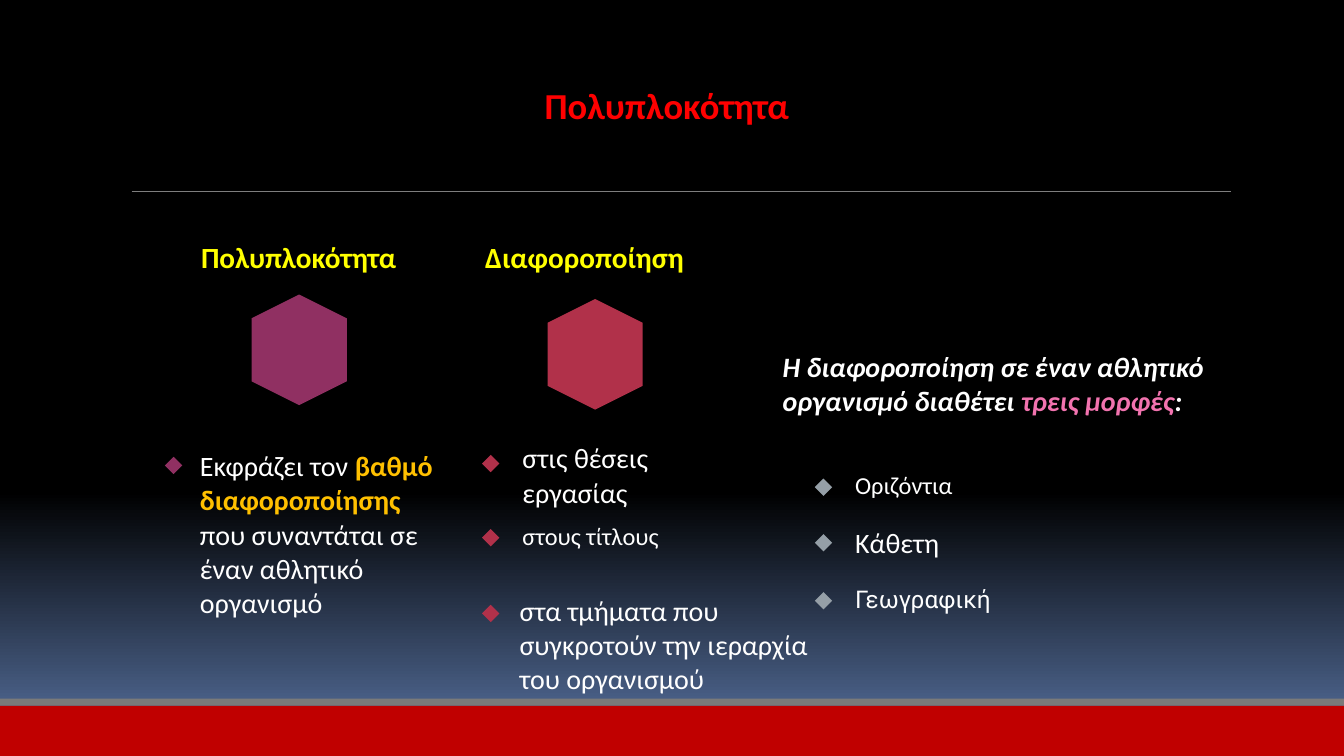
from copy import deepcopy

from pptx import Presentation
from pptx.dml.color import RGBColor
from pptx.enum.shapes import MSO_CONNECTOR, MSO_SHAPE
from pptx.enum.text import MSO_ANCHOR
from pptx.oxml.ns import qn
from pptx.util import Pt
from lxml import etree

RECTANGLE = MSO_SHAPE.RECTANGLE
DIAMOND = MSO_SHAPE.DIAMOND
STRAIGHT = MSO_CONNECTOR.STRAIGHT
TOP = MSO_ANCHOR.TOP

PLUM, CRIMSON, GREY = "903062", "B1314A", "959FA7"
WIDTH, HEIGHT = 960, 540


def color(hex_string):
    return RGBColor.from_string(hex_string)


def paint(shape, hex_string):
    shape.shadow.inherit = False
    shape.fill.solid()
    shape.fill.fore_color.rgb = color(hex_string)
    shape.line.fill.background()


presentation = Presentation()
presentation.slide_width, presentation.slide_height = Pt(WIDTH), Pt(HEIGHT)
slide = presentation.slides.add_slide(presentation.slide_layouts[6])
shapes = slide.shapes

# Background: black fading to blue at the bottom
background = slide.background.fill
background.gradient()
background.gradient_angle = 270
stop_list = slide.element.find(".//" + qn("a:gsLst"))
stop_list.append(deepcopy(stop_list[-1]))
stops = [(0, "000000"), (0.65, "000000"), (1, "5B77A8")]
for stop, (position, hex_string) in zip(background.gradient_stops, stops):
    stop.position = position
    stop.color.rgb = color(hex_string)

# Footer bands
for top, height, hex_string in [(504, 36, "C00000"), (499, 5, "7A7A7A")]:
    paint(shapes.add_shape(RECTANGLE, 0, Pt(top), Pt(WIDTH), Pt(height)), hex_string)

# Rule under the title
rule = shapes.add_connector(STRAIGHT, Pt(94), Pt(136.6), Pt(879), Pt(136.6))
rule.line.color.rgb = color("7E7E7E")
rule.line.width = Pt(0.5)
etree.SubElement(rule.element.spPr, qn("a:effectLst"))

# Upright hexagons, given by their top vertex
for x, y, hex_string in [(425.1, 213.6, CRIMSON), (213.7, 210.4, PLUM)]:
    builder = shapes.build_freeform(Pt(x), Pt(y))
    corners = [(-34, 17), (-34, 62), (0, 79), (34, 62), (34, 17)]
    builder.add_line_segments([(Pt(x + dx), Pt(y + dy)) for dx, dy in corners])
    paint(builder.convert_to_shape(), hex_string)

# Diamond bullets by column
bullet_columns = [
    (117.8, [326.3], PLUM),
    (344.3, [324.9, 377.9, 432], CRIMSON),
    (582, [341.8, 381.5, 422.9], GREY),
]
for left, tops, hex_string in bullet_columns:
    for top in tops:
        bullet = shapes.add_shape(DIAMOND, Pt(left), Pt(top), Pt(12.4), Pt(12.4))
        paint(bullet, hex_string)

# Run formats; raised text is drawn smaller than its nominal size
body = {"name": "Calibri", "size": Pt(20), "color": "FFFFFF"}
raised = {**body, "size": Pt(30), "baseline": 3000}
title = {**raised, "size": Pt(45), "color": "FF0000", "bold": True}
heading = {**raised, "size": Pt(36), "color": "FFFF00", "bold": True}
roboto = {**raised, "name": "Roboto", "baseline": 1000}
amber = {**body, "color": "FFC000", "bold": True}
lead = {**body, "bold": True, "italic": True}
pink = {**lead, "color": "F273AF"}

# Text boxes: left, top, width, height, then paragraphs of
# (line spacing, space before, runs)
LINE = Pt(24.4)
text_boxes = [
    (388.1, 64.1, 206.6, 31.7, [(Pt(31.6), 1.6, [("Πολυπλοκότητα", title)])]),
    (142.6, 175, 165.6, 25.9, [(Pt(25.4), 1.3, [("Πολυπλοκότητα", heading)])]),
    (345.6, 175, 169.2, 25.9, [(Pt(25.4), 1.3, [("Διαφοροποίηση", heading)])]),
    (558, 249.1, 360, 63.4, [
        (LINE, 1.1, [("Η διαφοροποίηση σε έναν αθλητικό", lead)]),
        (LINE, 0, [("οργανισμό διαθέτει ", lead), ("τρεις μορφές", pink), (":", lead)]),
    ]),
    (372.2, 314.6, 94.3, 40.3, [
        (LINE, 2, [("στις θέσεις", body)]),
        (LINE, 0, [("εργασίας", body)]),
    ]),
    (141.8, 319.7, 170.6, 98.6, [
        (Pt(24.9), 1.1, [("Εκφράζει τον ", body), ("βαθμό", amber)]),
        (LINE, 0, [("διαφοροποίησης", amber)]),
        (LINE, 0, [("που συναντάται σε", body)]),
        (LINE, 0, [("έναν αθλητικό", body)]),
        (LINE, 0, [("οργανισμό", body)]),
    ]),
    (609.8, 339.1, 110, 61.9, [
        (Pt(21.4), 1.1, [("Οριζόντια", raised)]),
        (1.02, 14.1, [("Κάθετη", body)]),
    ]),
    (372.2, 375.1, 117.4, 22.3, [(Pt(21.4), 1.1, [("στους τίτλους", raised)])]),
    (609.8, 419, 112.3, 22.3, [(Pt(22.1), 1.1, [("Γεωγραφική", roboto)])]),
    (370.1, 423.4, 212, 60.5, [
        (LINE, 1.1, [("στα τμήματα που", body)]),
        (LINE, 0, [("συγκροτούν την ιεραρχία", body)]),
        (LINE, 0, [("του οργανισμού", body)]),
    ]),
]
frame_format = {
    "word_wrap": True, "vertical_anchor": TOP,
    "margin_left": 0, "margin_top": 0, "margin_right": 0, "margin_bottom": 0,
}
for left, top, width, height, paragraphs in text_boxes:
    frame = shapes.add_textbox(Pt(left), Pt(top), Pt(width), Pt(height)).text_frame
    for attribute, value in frame_format.items():
        setattr(frame, attribute, value)
    for index, (spacing, before, runs) in enumerate(paragraphs):
        paragraph = frame.add_paragraph() if index else frame.paragraphs[0]
        paragraph.line_spacing = spacing
        paragraph.space_before = Pt(before)
        paragraph_properties = paragraph._p.get_or_add_pPr()
        paragraph_properties.set("marL", str(Pt(1)))
        for text, run_format in runs:
            run = paragraph.add_run()
            run.text = text
            for attribute, value in run_format.items():
                if attribute == "color":
                    run.font.color.rgb = color(value)
                elif attribute == "baseline":
                    run._r.get_or_add_rPr().set("baseline", str(value))
                else:
                    setattr(run.font, attribute, value)

presentation.save("out.pptx")
